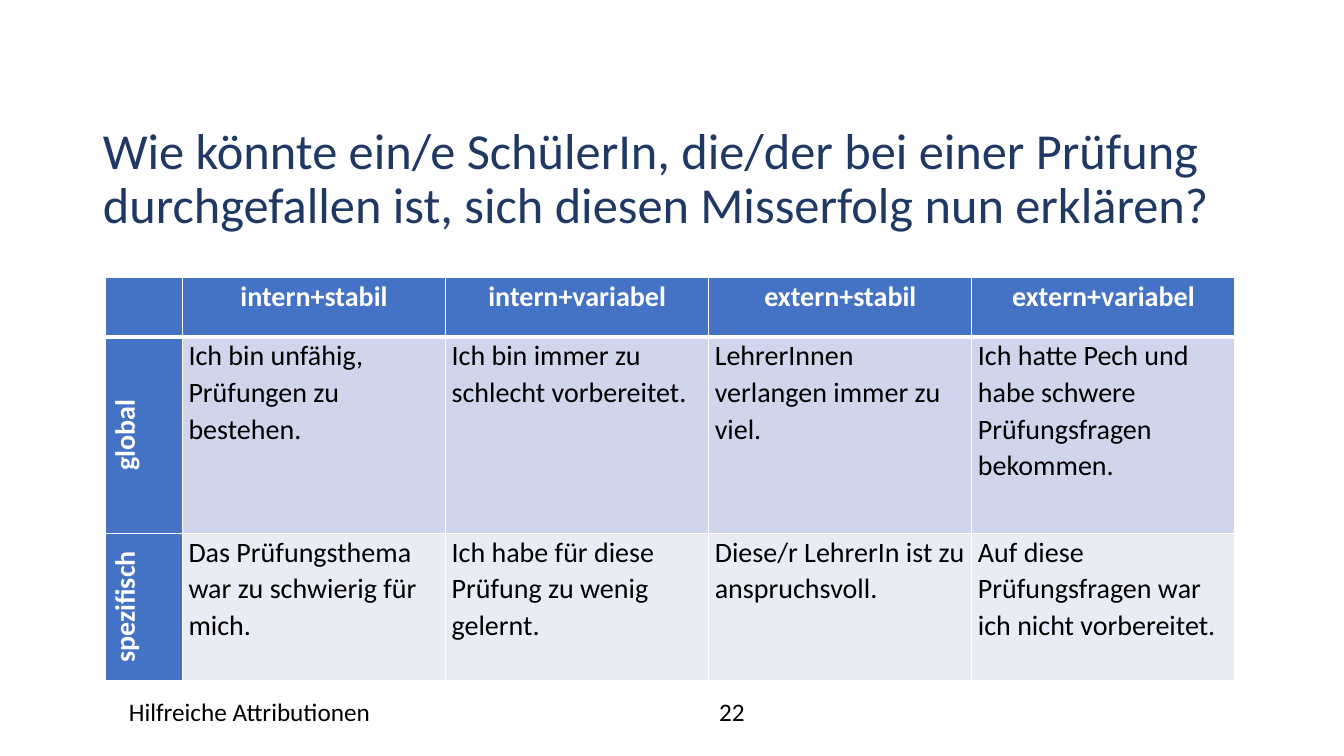
from dataclasses import dataclass

from lxml import etree
from pptx import Presentation
from pptx import util as u
from pptx.dml.color import RGBColor
from pptx.enum import text
from pptx.oxml import ns

# Content
TITLE = ("Wie könnte ein/e SchülerIn, die/der bei einer Prüfung durchgefallen ist, "
         "sich diesen Misserfolg nun erklären?")
FOOTER = "Hilfreiche Attributionen"
PAGE_NUMBER = "22"
ATTRIBUTIONS = [
    ["", "intern+stabil", "intern+variabel", "extern+stabil", "extern+variabel"],
    ["global",
     "Ich bin unfähig, Prüfungen zu bestehen.",
     "Ich bin immer zu schlecht vorbereitet.",
     "LehrerInnen verlangen immer zu viel.",
     "Ich hatte Pech und habe schwere Prüfungsfragen bekommen."],
    ["spezifisch",
     "Das Prüfungsthema war zu schwierig für mich.",
     "Ich habe für diese Prüfung zu wenig gelernt.",
     "Diese/r LehrerIn ist zu anspruchsvoll.",
     "Auf diese Prüfungsfragen war ich nicht vorbereitet."],
]


@dataclass(frozen=True)
class Theme:
    font: str = "Calibri"
    title: str = "203864"
    body: str = "000000"
    light: str = "FFFFFF"
    header: str = "4472C4"
    bands: tuple = ("CFD5EA", "E9EBF5")
    title_size: int = 36
    table_size: int = 20
    footer_size: int = 18
    line: int = 1
    header_line: int = 3


THEME = Theme()

# Layout in inches: left, top, width, height
SLIDE_SIZE = (13.33, 7.5)
TITLE_BOX = (0.92, 1.2, 11.5, 0.97)
FOOTER_BOX = (1.18, 6.86, 4.5, 0.4)
NUMBER_BOX = (5.76, 6.86, 3, 0.4)
TABLE_CORNER = (1.05, 2.75)
COLUMNS = [0.76] + [2.61] * 4
ROWS = [0.59, 1.95, 1.46]
CELL_MARGIN = 0.06
HEADING_INDENT = 0.08


def inches(values):
    return [u.Inches(value) for value in values]


def write(frame, words, size, color=THEME.body, bold=False,
          align=text.PP_ALIGN.LEFT, spacing=1.0, indent=0):
    """Fill a text frame with one formatted paragraph."""
    paragraph = frame.paragraphs[0]
    paragraph.text = words
    paragraph.alignment = align
    paragraph.line_spacing = spacing
    if indent:
        properties = paragraph._p.get_or_add_pPr()
        for side in ("marL", "marR"):
            properties.set(side, str(u.Inches(indent)))
    font = paragraph.font
    for item in [font] + [run.font for run in paragraph.runs]:
        item.name, item.size, item.bold = THEME.font, u.Pt(size), bold
        item.color.rgb = RGBColor.from_string(color)


def add_borders(cell, top, bottom):
    """Draw the four cell edges; must run before the cell is filled."""
    properties = cell._tc.get_or_add_tcPr()
    edges = {"lnL": THEME.line, "lnR": THEME.line, "lnT": top, "lnB": bottom}
    for edge, width in edges.items():
        line = etree.SubElement(properties, ns.qn("a:" + edge), w=str(u.Pt(width)))
        fill = etree.SubElement(line, ns.qn("a:solidFill"))
        etree.SubElement(fill, ns.qn("a:srgbClr"), val=THEME.light)


def format_cell(cell, words, row, column):
    heading = row == 0 or column == 0
    add_borders(cell,
                top=THEME.header_line if row == 1 else THEME.line,
                bottom=THEME.header_line if row == 0 else THEME.line)
    cell.fill.solid()
    cell.fill.fore_color.rgb = RGBColor.from_string(
        THEME.header if heading else THEME.bands[row - 1])
    cell.margin_left = cell.margin_right = u.Inches(CELL_MARGIN)
    cell.margin_top = cell.margin_bottom = 0
    cell.vertical_anchor = text.MSO_ANCHOR.TOP
    if column == 0 and row > 0:
        cell._tc.get_or_add_tcPr().set("vert", "vert270")
    write(cell.text_frame, words, THEME.table_size, bold=heading, spacing=1.07,
          color=THEME.light if heading else THEME.body,
          align=text.PP_ALIGN.CENTER if heading else text.PP_ALIGN.LEFT,
          indent=HEADING_INDENT if heading else 0)


def add_table(slide):
    size = inches((sum(COLUMNS), sum(ROWS)))
    table = slide.shapes.add_table(
        len(ROWS), len(COLUMNS), *inches(TABLE_CORNER), *size).table
    for column, width in zip(table.columns, inches(COLUMNS)):
        column.width = width
    for row, height in zip(table.rows, inches(ROWS)):
        row.height = height
    for row, entries in enumerate(ATTRIBUTIONS):
        for column, words in enumerate(entries):
            format_cell(table.cell(row, column), words, row, column)


def main():
    presentation = Presentation()
    presentation.slide_width, presentation.slide_height = inches(SLIDE_SIZE)
    slide = presentation.slides.add_slide(presentation.slide_layouts[5])

    # Title
    title = slide.shapes.title
    title.left, title.top, title.width, title.height = inches(TITLE_BOX)
    frame = title.text_frame
    frame.word_wrap = True
    frame.auto_size = text.MSO_AUTO_SIZE.NONE
    frame.vertical_anchor = text.MSO_ANCHOR.TOP
    write(frame, TITLE, THEME.title_size, color=THEME.title, spacing=0.9)

    # Footer and page number
    for box, words, align in (
            (FOOTER_BOX, FOOTER, text.PP_ALIGN.LEFT),
            (NUMBER_BOX, PAGE_NUMBER, text.PP_ALIGN.CENTER)):
        frame = slide.shapes.add_textbox(*inches(box)).text_frame
        frame.word_wrap = True
        write(frame, words, THEME.footer_size, align=align)

    # Attribution table
    add_table(slide)
    presentation.save("out.pptx")


if __name__ == "__main__":
    main()
